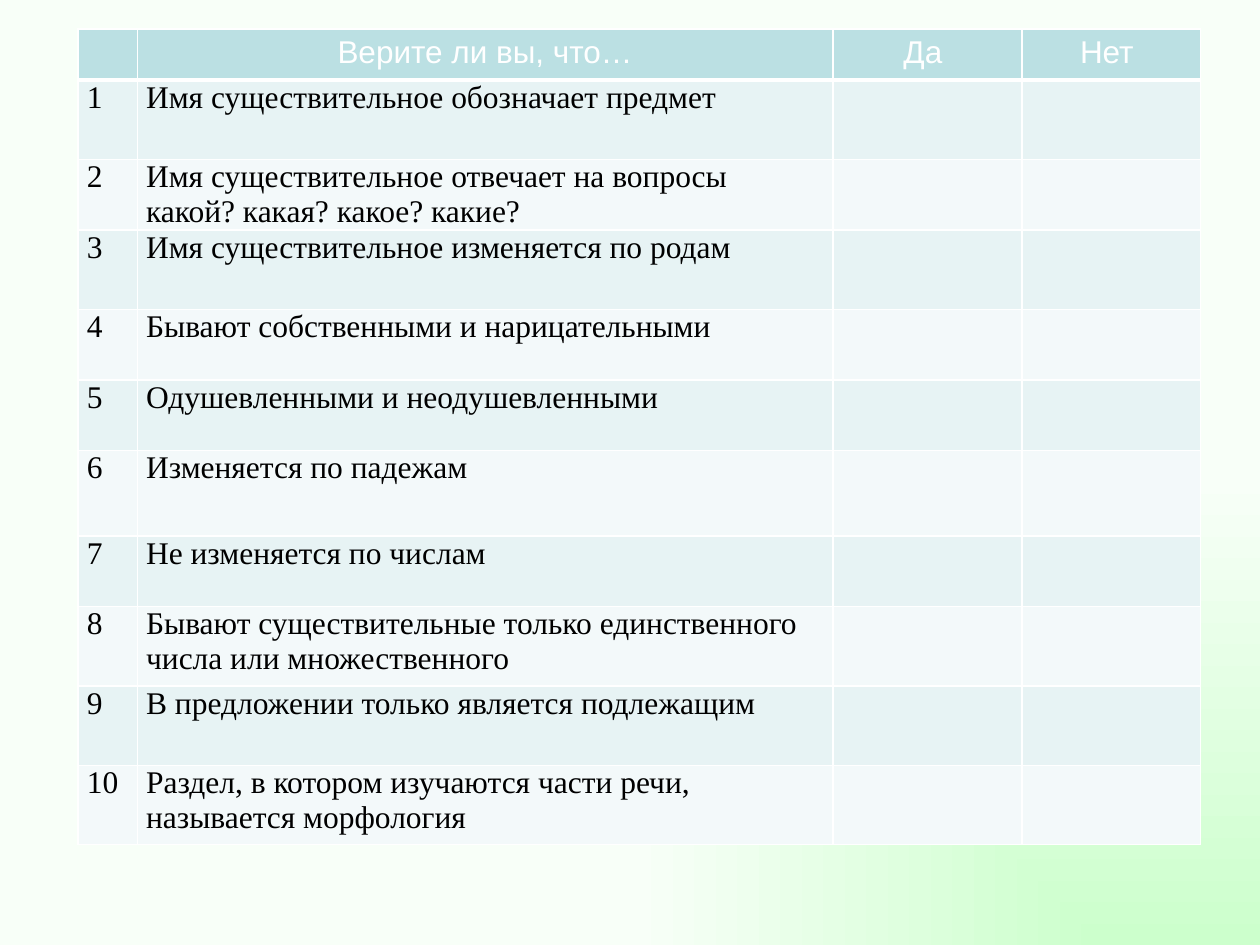
from pptx import Presentation
from pptx.dml.color import RGBColor as RGB
from pptx.enum.text import PP_ALIGN as Align
from pptx.oxml import parse_xml
from pptx.oxml.ns import nsdecls, qn
from pptx.util import Inches, Pt

WHITE = RGB(0xFF, 0xFF, 0xFF)
BLACK = RGB(0x00, 0x00, 0x00)
GREEN = RGB(0xCC, 0xFF, 0xCC)
PALE = RGB(0xF8, 0xFF, 0xF8)
HEAD = RGB(0xBB, 0xE0, 0xE3)
BANDS = (RGB(0xE7, 0xF3, 0xF4), RGB(0xF3, 0xF9, 0xFA))

TITLES = ("", "Верите ли вы, что…", "Да ", "Нет ")
CLAIMS = (
    "Имя существительное обозначает предмет",
    "Имя существительное отвечает на вопросы какой? какая? какое? какие?",
    "Имя существительное изменяется по родам",
    "Бывают собственными и нарицательными",
    "Одушевленными и неодушевленными",
    "Изменяется по падежам",
    "Не изменяется по числам",
    "Бывают существительные только единственного числа или множественного",
    "В предложении только является подлежащим",
    "Раздел, в котором изучаются части речи, называется морфология",
)
WIDTHS = (0.47, 5.52, 1.5, 1.42)
HEIGHTS = (0.4, 0.63, 0.56, 0.63, 0.56, 0.56, 0.68, 0.56, 0.63, 0.63, 0.63)


class Deck:
    size = Pt(18)
    inset = Inches(0.07)

    def __init__(self, slide):
        self.slide = slide

    def backdrop(self, inner, outer):
        """Gradient that spreads from the lower right corner."""
        fill = self.slide.background.fill
        fill.gradient()
        for stop, color, place in zip(fill.gradient_stops, (inner, outer), (0, 1)):
            stop.color.rgb = color
            stop.position = place
        grad = self.slide.element.find(".//" + qn("a:gradFill"))
        grad.replace(grad.find(qn("a:lin")), parse_xml(
            f'<a:path {nsdecls("a")} path="rect">'
            '<a:fillToRect l="100000" t="100000"/></a:path>'))

    def table(self, left, top, widths, heights):
        grid = self.slide.shapes.add_table(
            len(heights), len(widths), Inches(left), Inches(top),
            Inches(sum(widths)), Inches(sum(heights))).table
        for col, width in zip(grid.columns, widths):
            col.width = Inches(width)
        for row, height in zip(grid.rows, heights):
            row.height = Inches(height)
        return grid

    def border(self, cell, base):
        props = cell._tc.get_or_add_tcPr()
        for side, width in zip("LRTB", (1, 1, 1, base)):
            props.append(parse_xml(
                f'<a:ln{side} {nsdecls("a")} w="{Pt(width)}"><a:solidFill>'
                f'<a:srgbClr val="{WHITE}"/></a:solidFill></a:ln{side}>'))

    def cell(self, cell, text, fill, font, color, align, base=1):
        self.border(cell, base)
        cell.fill.solid()
        cell.fill.fore_color.rgb = fill
        if not text:
            return
        para = cell.text_frame.paragraphs[0]
        para.alignment = align
        run = para.add_run()
        run.text = text
        run.font.name = font
        run.font.size = self.size
        run.font.bold = False
        run.font.color.rgb = color

    def tight(self, cell):
        cell.margin_left = cell.margin_right = self.inset
        cell.margin_top = cell.margin_bottom = 0


def main():
    prs = Presentation()
    prs.slide_width, prs.slide_height = Inches(10), Inches(7.5)
    deck = Deck(prs.slides.add_slide(prs.slide_layouts[6]))
    deck.backdrop(GREEN, PALE)
    grid = deck.table(0.62, 0.23, WIDTHS, HEIGHTS)

    # Header row
    for col, title in enumerate(TITLES):
        deck.cell(grid.cell(0, col), title, HEAD, "Arial", WHITE,
                  Align.CENTER, base=3)

    # Numbered claims with blank answer cells
    for row, claim in enumerate(CLAIMS, 1):
        band = BANDS[(row - 1) % 2]
        for col, text in enumerate((str(row), claim, "", "")):
            cell = grid.cell(row, col)
            deck.cell(cell, text, band, "Times New Roman", BLACK, Align.LEFT)
            if text:
                deck.tight(cell)

    prs.save("out.pptx")


if __name__ == "__main__":
    main()
